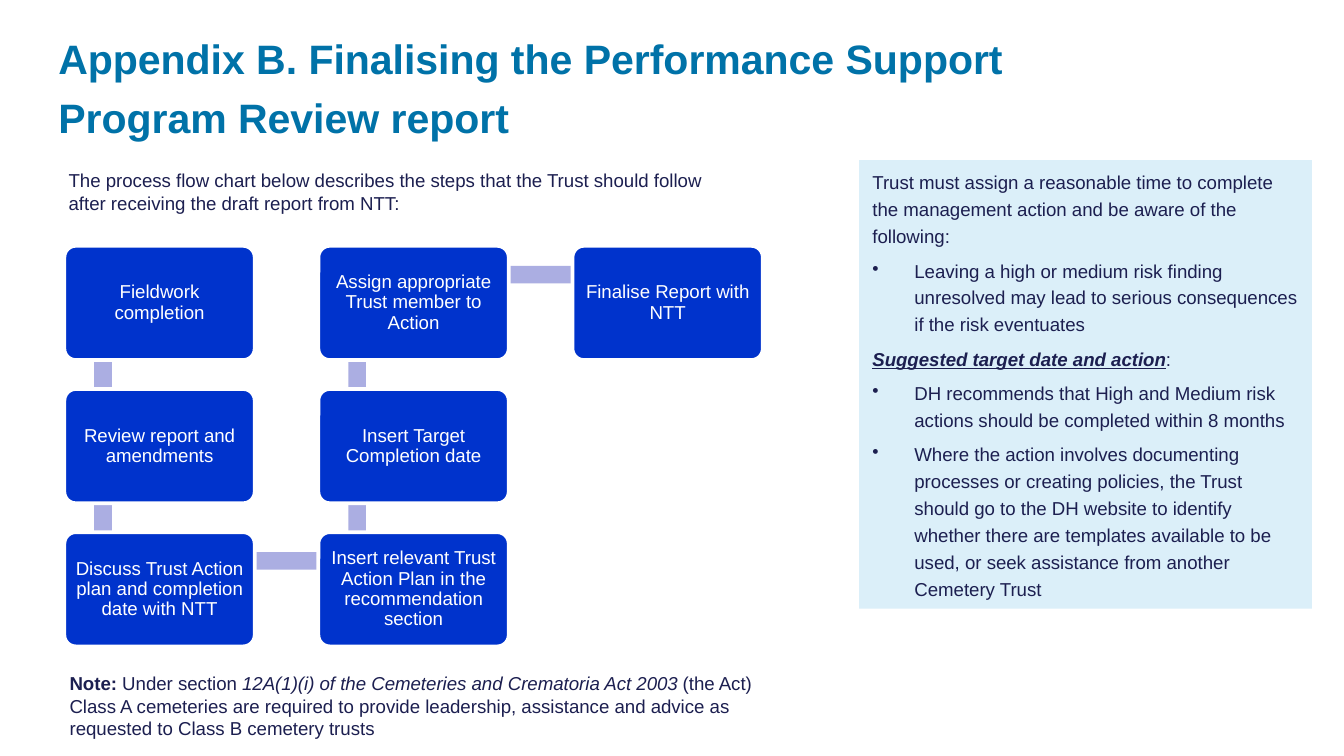
import dataclasses

import lxml.etree
import pptx
import pptx.dml.color
import pptx.enum.shapes
import pptx.enum.text
import pptx.oxml.ns
import pptx.util

Pt = pptx.util.Pt
SHAPES = pptx.enum.shapes.MSO_SHAPE
ALIGN = pptx.enum.text.PP_ALIGN
ANCHOR = pptx.enum.text.MSO_ANCHOR
AUTOSIZE = pptx.enum.text.MSO_AUTO_SIZE


@dataclasses.dataclass(frozen=True)
class Theme:
    font: str = "Arial"
    title_size: float = 22
    body_size: float = 10
    title: str = "0072A8"
    ink: str = "1C1F50"
    white: str = "FFFFFF"
    step: str = "0033CC"
    link: str = "ABAEE2"
    panel: str = "DBEFF9"


THEME = Theme()

# Flow grid: origin, pitch, box size and the point where links meet a box
FLOW_LEFT, FLOW_TOP = 34.5, 131.7
PITCH_X, PITCH_Y = 136.1, 76.7
STEP_W, STEP_H = 102, 61.2
ANCHOR_X, ANCHOR_Y = 20.7, 15.4
LINK_WIDTH = 9.4

# Steps in reading order: column, row, wording
STEPS = [
    (0, 0, "Fieldwork completion"),
    (0, 1, "Review report and amendments"),
    (0, 2, "Discuss Trust Action plan and completion date with NTT"),
    (1, 2, "Insert relevant Trust Action Plan in the recommendation section"),
    (1, 1, "Insert Target Completion date"),
    (1, 0, "Assign appropriate Trust member to Action"),
    (2, 0, "Finalise Report with NTT"),
]

# Guidance paragraphs: bulleted or not, then runs of (wording, style)
GUIDANCE = [
    (False, [("Trust must assign a reasonable time to complete the management action "
              "and be aware of the following:", "")]),
    (True, [("Leaving a high or medium risk finding unresolved may lead to serious "
             "consequences if the risk eventuates", "")]),
    (False, [("Suggested target date and action", "biu"), (":", "")]),
    (True, [("DH recommends that High and Medium risk actions should be completed "
             "within 8 months", "")]),
    (True, [("Where the action involves documenting processes or creating policies, "
             "the Trust should go to the DH website to identify whether there are "
             "templates available to be used, or seek assistance from another "
             "Cemetery Trust", "")]),
]

INTRO = [("The process flow chart below describes the steps that the Trust should "
          "follow after receiving the draft report from NTT:", "")]
NOTE = [
    ("Note:", "b"),
    (" Under section ", ""),
    ("12A(1)(i) of the Cemeteries and Crematoria Act 2003", "i"),
    (" (the Act) Class A cemeteries are required to provide leadership, assistance "
     "and advice as requested to Class B cemetery trusts", ""),
]


def rgb(code):
    return pptx.dml.color.RGBColor.from_string(code)


def add_runs(paragraph, runs, color=THEME.ink, size=THEME.body_size):
    """Style letters: b bold, i italic, u underlined."""
    for wording, style in runs:
        run = paragraph.add_run()
        run.text = wording
        run.font.name = THEME.font
        run.font.size = Pt(size)
        run.font.color.rgb = rgb(color)
        run.font.bold = "b" in style
        run.font.italic = "i" in style
        run.font.underline = "u" in style


def add_block(slide, preset, left, top, width, height, fill):
    block = slide.shapes.add_shape(preset, Pt(left), Pt(top), Pt(width), Pt(height))
    block.shadow.inherit = False
    block.fill.solid()
    block.fill.fore_color.rgb = rgb(fill)
    block.line.fill.background()
    return block


def add_bullet(paragraph, indent=22.5):
    properties = paragraph._p.get_or_add_pPr()
    properties.set("marL", str(Pt(indent)))
    properties.set("indent", str(-Pt(indent)))
    bullet = lxml.etree.SubElement(properties, pptx.oxml.ns.qn("a:buChar"))
    bullet.set("char", "•")


def add_title(slide, wording):
    title = slide.shapes.title
    title.left, title.top, title.width, title.height = Pt(24), Pt(21), Pt(590), Pt(47)
    frame = title.text_frame
    frame.word_wrap = True
    frame.auto_size = AUTOSIZE.NONE
    frame.vertical_anchor = ANCHOR.MIDDLE
    heading = frame.paragraphs[0]
    heading.alignment = ALIGN.LEFT
    heading.line_spacing = 1.2
    heading.space_after = Pt(2)
    add_runs(heading, [(wording, "b")], THEME.title, THEME.title_size)


def add_passage(slide, left, top, width, height, runs):
    passage = slide.shapes.add_textbox(Pt(left), Pt(top), Pt(width), Pt(height))
    frame = passage.text_frame
    frame.word_wrap = True
    frame.auto_size = AUTOSIZE.SHAPE_TO_FIT_TEXT
    add_runs(frame.paragraphs[0], runs)


def step_corner(column, row):
    return FLOW_LEFT + column * PITCH_X, FLOW_TOP + row * PITCH_Y


def add_link(slide, start, end):
    """Bar joining the meeting points of two neighbouring steps."""
    (x1, y1), (x2, y2) = sorted([step_corner(*start), step_corner(*end)])
    across, down = x2 - x1, abs(y2 - y1)
    left, top = x1 + ANCHOR_X, min(y1, y2) + ANCHOR_Y
    if across:
        add_block(slide, SHAPES.RECTANGLE, left, top - LINK_WIDTH / 2,
                  across, LINK_WIDTH, THEME.link)
    else:
        add_block(slide, SHAPES.RECTANGLE, left - LINK_WIDTH / 2, top,
                  LINK_WIDTH, down, THEME.link)


def add_step(slide, column, row, wording):
    step = add_block(slide, SHAPES.ROUNDED_RECTANGLE, *step_corner(column, row),
                     STEP_W, STEP_H, THEME.step)
    step.adjustments[0] = 0.1
    step.line.color.rgb = rgb(THEME.white)
    step.line.width = Pt(2)
    frame = step.text_frame
    frame.word_wrap = True
    frame.vertical_anchor = ANCHOR.MIDDLE
    frame.margin_left = frame.margin_right = Pt(2.9)
    frame.margin_top = frame.margin_bottom = Pt(2.9)
    label = frame.paragraphs[0]
    label.alignment = ALIGN.CENTER
    label.line_spacing = 0.9
    add_runs(label, [(wording, "")], THEME.white)


def add_guidance(slide):
    panel = add_block(slide, SHAPES.RECTANGLE, 460.3, 85.8, 242.6, 240.3, THEME.panel)
    frame = panel.text_frame
    frame.word_wrap = True
    frame.auto_size = AUTOSIZE.SHAPE_TO_FIT_TEXT
    frame.vertical_anchor = ANCHOR.TOP
    for index, (bulleted, runs) in enumerate(GUIDANCE):
        advice = frame.add_paragraph() if index else frame.paragraphs[0]
        if bulleted:
            add_bullet(advice)
        advice.alignment = ALIGN.LEFT
        advice.line_spacing = 1.2
        advice.space_before = Pt(2 if index else 0)
        advice.space_after = Pt(2)
        add_runs(advice, runs)


def main():
    deck = pptx.Presentation()
    deck.slide_width, deck.slide_height = Pt(720), Pt(405)
    slide = deck.slides.add_slide(deck.slide_layouts[5])

    # Heading and introduction
    add_title(slide, "Appendix B. Finalising the Performance Support Program Review report")
    add_passage(slide, 29.7, 87, 360, 31.5, INTRO)

    # Flow chart: links lie beneath the steps
    for (*start, _), (*end, _) in zip(STEPS, STEPS[1:]):
        add_link(slide, start, end)
    for column, row, wording in STEPS:
        add_step(slide, column, row, wording)

    # Guidance panel and closing note
    add_guidance(slide)
    add_passage(slide, 30.2, 356.5, 400, 43, NOTE)

    deck.save("out.pptx")


if __name__ == "__main__":
    main()
